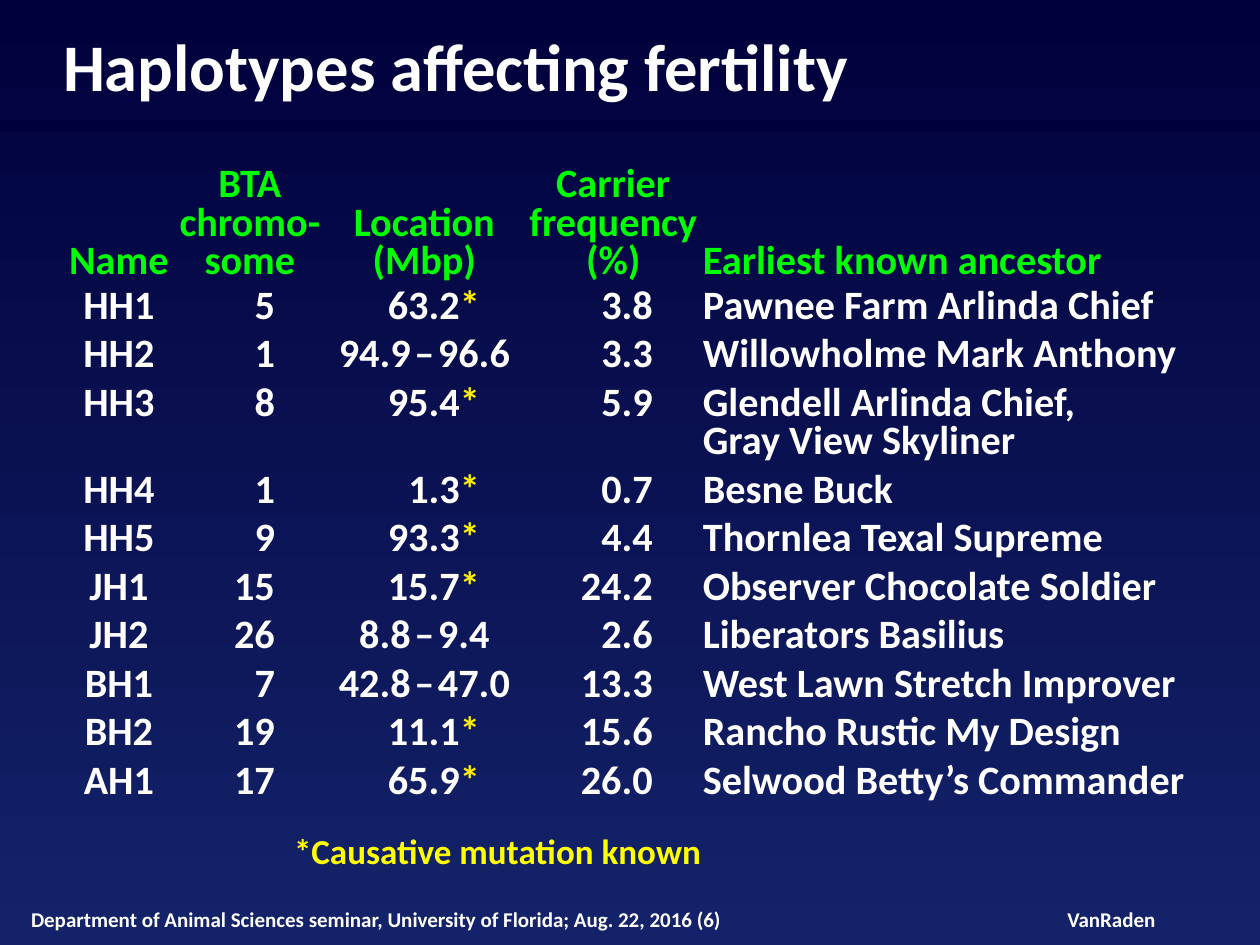
from lxml.etree import SubElement
from pptx import Presentation
from pptx.dml.color import RGBColor
from pptx.enum.shapes import MSO_CONNECTOR
from pptx.enum.text import MSO_ANCHOR, MSO_AUTO_SIZE, PP_ALIGN
from pptx.oxml.ns import qn
from pptx.util import Pt

PX = 914400 // 126
WHITE = RGBColor(0xFF, 0xFF, 0xFF)
GREEN = RGBColor(0x00, 0xFF, 0x00)
YELLOW = RGBColor(0xFF, 0xFF, 0x00)
STAR_YELLOW = RGBColor(0xFF, 0xF0, 0x00)
NAVY = RGBColor(0x00, 0x00, 0x3C)
BLUE = RGBColor(0x14, 0x23, 0x69)
NO_STYLE = "{2D5ABB26-0587-4C30-8999-92F81FD0307C}"
LEFT, CENTER, RIGHT = PP_ALIGN.LEFT, PP_ALIGN.CENTER, PP_ALIGN.RIGHT


def add_run(p, text, size, color):
    r = p.add_run()
    r.text = text
    r.font.name = "Calibri"
    r.font.size = Pt(size)
    r.font.bold = True
    r.font.color.rgb = color
    return r


def fill_box(sp, box, text, size, color, anchor, align=LEFT, wrap=True):
    """Place a shape and give it one line of text without insets."""
    sp.left, sp.top, sp.width, sp.height = [v * PX for v in box]
    tf = sp.text_frame
    tf.margin_left = tf.margin_top = tf.margin_right = tf.margin_bottom = 0
    tf.vertical_anchor = anchor
    tf.word_wrap = wrap
    tf.auto_size = MSO_AUTO_SIZE.SHAPE_TO_FIT_TEXT
    p = tf.paragraphs[0]
    p.alignment = align
    add_run(p, text, size, color)


prs = Presentation()
prs.slide_width, prs.slide_height = 1260 * PX, 945 * PX
s = prs.slides.add_slide(prs.slide_layouts[5])

fill = s.background.fill
fill.gradient()
fill.gradient_angle = 270
for stop, color in zip(fill.gradient_stops, (NAVY, BLUE)):
    stop.color.rgb = color

rule = s.shapes.add_connector(MSO_CONNECTOR.STRAIGHT, 0, 126 * PX, 1260 * PX, 126 * PX)
rule.line.color.rgb = NAVY
rule.line.width = Pt(6.5)
SubElement(rule._element.spPr, qn("a:effectLst"))

fill_box(s.shapes.title, (63, 25, 1134, 81), "Haplotypes affecting fertility",
         38, WHITE, MSO_ANCHOR.TOP)

labels = [
    ((1067, 907, 89, 25), "VanRaden", 12, WHITE, CENTER, False),
    ((31, 907, 777, 25),
     "Department of Animal Sciences seminar, University of Florida; Aug. 22, 2016 (6)",
     12, WHITE, LEFT, True),
    ((294, 829, 411, 43), "*Causative mutation known", 20, YELLOW, LEFT, False),
]
for box, text, size, color, align, wrap in labels:
    fill_box(s.shapes.add_textbox(0, 0, 0, 0), box, text, size, color,
             MSO_ANCHOR.MIDDLE, align, wrap)

rows = [
    ("Name", "BTA\nchromo-\nsome", "Location\n(Mbp)", "Carrier\nfrequency\n(%)",
     "Earliest known ancestor"),
    ("HH1", "5", "63.2*", "3.8", "Pawnee Farm Arlinda Chief"),
    ("HH2", "1", "94.9–96.6", "3.3", "Willowholme Mark Anthony"),
    ("HH3", "8", "95.4*", "5.9", "Glendell Arlinda Chief,\nGray View Skyliner"),
    ("HH4", "1", "1.3*", "0.7", "Besne Buck"),
    ("HH5", "9", "93.3*", "4.4", "Thornlea Texal Supreme"),
    ("JH1", "15", "15.7*", "24.2", "Observer Chocolate Soldier"),
    ("JH2", "26", "8.8–9.4", "2.6", "Liberators Basilius"),
    ("BH1", "7", "42.8–47.0", "13.3", "West Lawn Stretch Improver"),
    ("BH2", "19", "11.1*", "15.6", "Rancho Rustic My Design"),
    ("AH1", "17", "65.9*", "26.0", "Selwood Betty’s Commander"),
]
col_widths = [112, 150, 199, 179, 504]
aligns = [CENTER, RIGHT, RIGHT, RIGHT, LEFT]
right_insets = [0, 50, 44, 50, 0]
last = len(rows) - 1

table = s.shapes.add_table(len(rows), len(col_widths), 63 * PX, 170 * PX,
                           sum(col_widths) * PX, 636 * PX).table
table.first_row = table.horz_banding = False
table._tbl.tblPr.find(qn("a:tableStyleId")).text = NO_STYLE
for col, width in zip(table.columns, col_widths):
    col.width = width * PX

for i, row in enumerate(rows):
    header = i == 0
    extra_lines = max(text.count("\n") for text in row)
    bottom = 6 if header else 0 if i == last else 10
    table.rows[i].height = (38 * (1 + extra_lines) + bottom) * PX
    for j, text in enumerate(row):
        cell = table.cell(i, j)
        cell.fill.background()
        is_range = "–" in text
        cell.margin_left = cell.margin_top = 0
        cell.margin_right = 0 if header or is_range else right_insets[j] * PX
        cell.margin_bottom = bottom * PX if header or j == 4 else 0
        cell.vertical_anchor = MSO_ANCHOR.BOTTOM if header else MSO_ANCHOR.TOP
        align = CENTER if is_range or (header and j < 4) else aligns[j]
        tf = cell.text_frame
        tf.text = "\n" * text.count("\n")
        for p, line in zip(tf.paragraphs, text.split("\n")):
            p.alignment = align
            p.line_spacing = Pt(22)
            if is_range:
                start, end = line.split("–")
                add_run(p, start[:-1], 23, WHITE)
                # Wider letter spacing sets the dash off from both numbers
                dash = add_run(p, start[-1] + "–", 23, WHITE)
                dash.font._element.set("spc", "200")
                add_run(p, end, 23, WHITE)
            else:
                add_run(p, line.rstrip("*"), 23, GREEN if header else WHITE)
                if line.endswith("*"):
                    add_run(p, "*", 23, STAR_YELLOW)

prs.save("out.pptx")
